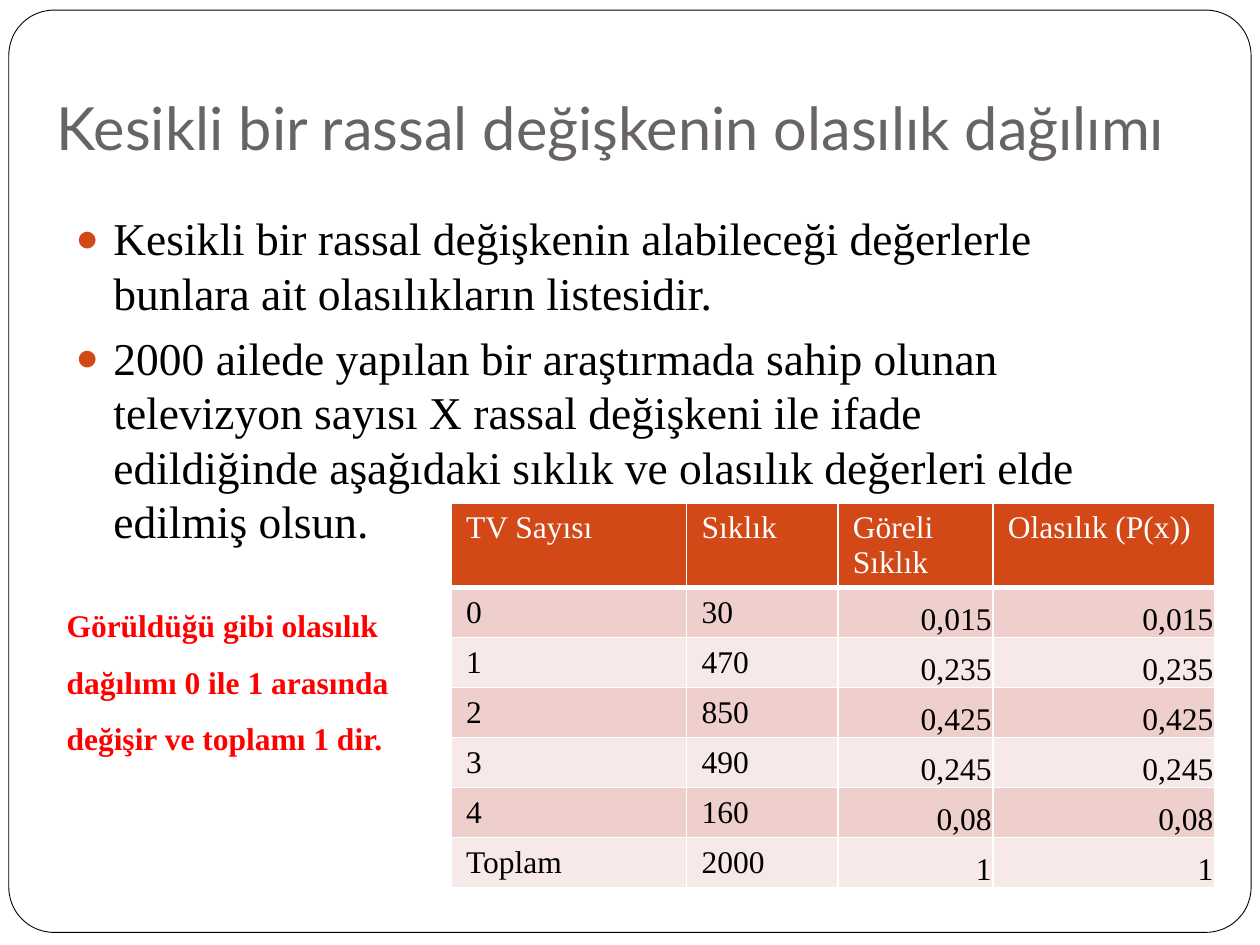
from dataclasses import dataclass

from lxml import etree
from pptx import Presentation
from pptx import util as u
from pptx.dml.color import RGBColor
from pptx.enum import shapes, text
from pptx.oxml.ns import qn


@dataclass(frozen=True)
class Theme:
    heading_font: str = "Lato"
    body_font: str = "Times New Roman"
    white: str = "FFFFFF"
    ink: str = "000000"
    heading: str = "696464"
    accent: str = "D34817"
    warning: str = "FF0000"
    bands: tuple = ("EFCFCC", "F7E9E8")
    title_size: int = 34
    body_size: int = 26
    small_size: int = 18


def add_xml(parent, tag, **attributes):
    return etree.SubElement(parent, qn(tag), **attributes)


class SlideBuilder:
    def __init__(self, slide, theme):
        self.slide = slide
        self.theme = theme

    def place(self, shape, box):
        shape.left, shape.top, shape.width, shape.height = map(u.Inches, box)

    def inset(self, target, margins):
        (target.margin_left, target.margin_top,
         target.margin_right, target.margin_bottom) = map(u.Inches, margins)

    def style(self, paragraph, size, color, font=None, bold=False):
        paragraph.font.name = font or self.theme.body_font
        paragraph.font.size = u.Pt(size)
        paragraph.font.bold = bold
        paragraph.font.color.rgb = RGBColor.from_string(color)

    def frame(self, box, corner):
        """Draw the rounded page border behind everything else."""
        border = self.slide.shapes.add_shape(
            shapes.MSO_SHAPE.ROUNDED_RECTANGLE, *map(u.Inches, box))
        border.adjustments[0] = corner
        border.shadow.inherit = False
        border.fill.solid()
        border.fill.fore_color.rgb = RGBColor.from_string(self.theme.white)
        border.line.color.rgb = RGBColor.from_string(self.theme.ink)
        border.line.width = u.Pt(0.5)
        self.slide.shapes._spTree.insert(2, border._element)

    def title(self, wording, box):
        heading = self.slide.shapes.title
        self.place(heading, box)
        frame = heading.text_frame
        frame.text = wording
        frame.auto_size = text.MSO_AUTO_SIZE.NONE
        frame.vertical_anchor = text.MSO_ANCHOR.BOTTOM
        self.inset(frame, (0.1, 0.05, 0.1, 0.1))
        paragraph = frame.paragraphs[0]
        paragraph.alignment = text.PP_ALIGN.LEFT
        self.style(paragraph, self.theme.title_size, self.theme.heading,
                   self.theme.heading_font)

    def bullets(self, points, box):
        body = self.slide.placeholders[1]
        self.place(body, box)
        frame = body.text_frame
        frame.text = "\n".join(points)
        frame.auto_size = text.MSO_AUTO_SIZE.NONE
        for paragraph in frame.paragraphs:
            self.style(paragraph, self.theme.body_size, self.theme.ink)
            paragraph.space_before = u.Pt(5.8)
            properties = paragraph._p.get_or_add_pPr()
            indent = u.Inches(0.3)
            properties.set("marL", str(indent))
            properties.set("indent", str(-indent))
            # Bullet elements precede the default run properties in the schema.
            defaults = properties.find(qn("a:defRPr"))
            color = add_xml(properties, "a:buClr")
            add_xml(color, "a:srgbClr", val=self.theme.accent)
            add_xml(properties, "a:buSzPct", val="85000")
            add_xml(properties, "a:buFont", typeface="Arial")
            add_xml(properties, "a:buChar", char="●")
            if defaults is not None:
                properties.append(defaults)

    def note(self, wording, box):
        frame = self.slide.shapes.add_textbox(*map(u.Inches, box)).text_frame
        frame.word_wrap = True
        frame.text = wording
        paragraph = frame.paragraphs[0]
        paragraph.line_spacing = 1.5
        self.style(paragraph, self.theme.small_size, self.theme.warning, bold=True)

    def borders(self, cell, widths):
        """Draw white cell edges; widths maps L, R, T or B to points."""
        properties = cell._tc.get_or_add_tcPr()
        for side, width in widths.items():
            line = add_xml(properties, f"a:ln{side}", w=str(u.Pt(width)))
            fill = add_xml(line, "a:solidFill")
            add_xml(fill, "a:srgbClr", val=self.theme.white)

    def cell(self, cell, wording, row, is_computed):
        is_header = row == 0
        cell.text = wording
        paragraph = cell.text_frame.paragraphs[0]
        self.style(paragraph, self.theme.small_size,
                   self.theme.white if is_header else self.theme.ink)
        if is_computed and not is_header:
            self.inset(cell, (0.01, 0.01, 0.01, 0))
            cell.vertical_anchor = text.MSO_ANCHOR.BOTTOM
            paragraph.alignment = text.PP_ALIGN.RIGHT
        else:
            self.inset(cell, (0.12, 0.06, 0.12, 0.06))
        self.borders(cell, {"L": 1, "R": 1, "T": 1, "B": 3} if is_header
                     else {"L": 1, "R": 1, "B": 1})
        cell.fill.solid()
        cell.fill.fore_color.rgb = RGBColor.from_string(
            self.theme.accent if is_header else self.theme.bands[(row - 1) % 2])

    def table(self, rows, corner, widths, header_height, row_height):
        heights = [header_height] + [row_height] * (len(rows) - 1)
        table = self.slide.shapes.add_table(
            len(rows), len(widths), *map(u.Inches, corner),
            u.Inches(sum(widths)), u.Inches(sum(heights))).table
        for column, width in zip(table.columns, widths):
            column.width = u.Inches(width)
        for r, (values, height) in enumerate(zip(rows, heights)):
            table.rows[r].height = u.Inches(height)
            for c, value in enumerate(values):
                self.cell(table.cell(r, c), value, r, is_computed=c >= 2)


def main():
    deck = Presentation()
    deck.slide_width, deck.slide_height = u.Inches(10), u.Inches(7.5)
    page = SlideBuilder(deck.slides.add_slide(deck.slide_layouts[1]), Theme())

    page.frame((0.07, 0.08, 9.86, 7.32), corner=0.049)
    page.title("Kesikli bir rassal değişkenin olasılık dağılımı",
               (0.35, 0.3, 9.15, 1.09))
    page.bullets([
        "Kesikli bir rassal değişkenin alabileceği değerlerle bunlara ait "
        "olasılıkların listesidir.",
        "2000 ailede yapılan bir araştırmada sahip olunan televizyon sayısı X "
        "rassal değişkeni ile ifade edildiğinde aşağıdaki sıklık ve olasılık "
        "değerleri elde edilmiş olsun.",
    ], (0.5, 1.62, 8.17, 2.31))

    frequencies = [
        ("0", "30", "0,015"),
        ("1", "470", "0,235"),
        ("2", "850", "0,425"),
        ("3", "490", "0,245"),
        ("4", "160", "0,08"),
        ("Toplam", "2000", "1"),
    ]
    header = ("TV Sayısı", "Sıklık", "Göreli Sıklık", "Olasılık (P(x))")
    # The probability of each value equals its relative frequency.
    distribution = [(*row, row[-1]) for row in frequencies]
    page.table([header, *distribution], corner=(3.58, 3.99),
               widths=(1.87, 1.2, 1.23, 1.76), header_height=0.67, row_height=0.39)

    page.note("Görüldüğü gibi olasılık dağılımı 0 ile 1 arasında değişir ve "
              "toplamı 1 dir.", (0.43, 4.61, 3.31, 1.43))
    deck.save("out.pptx")


if __name__ == "__main__":
    main()
